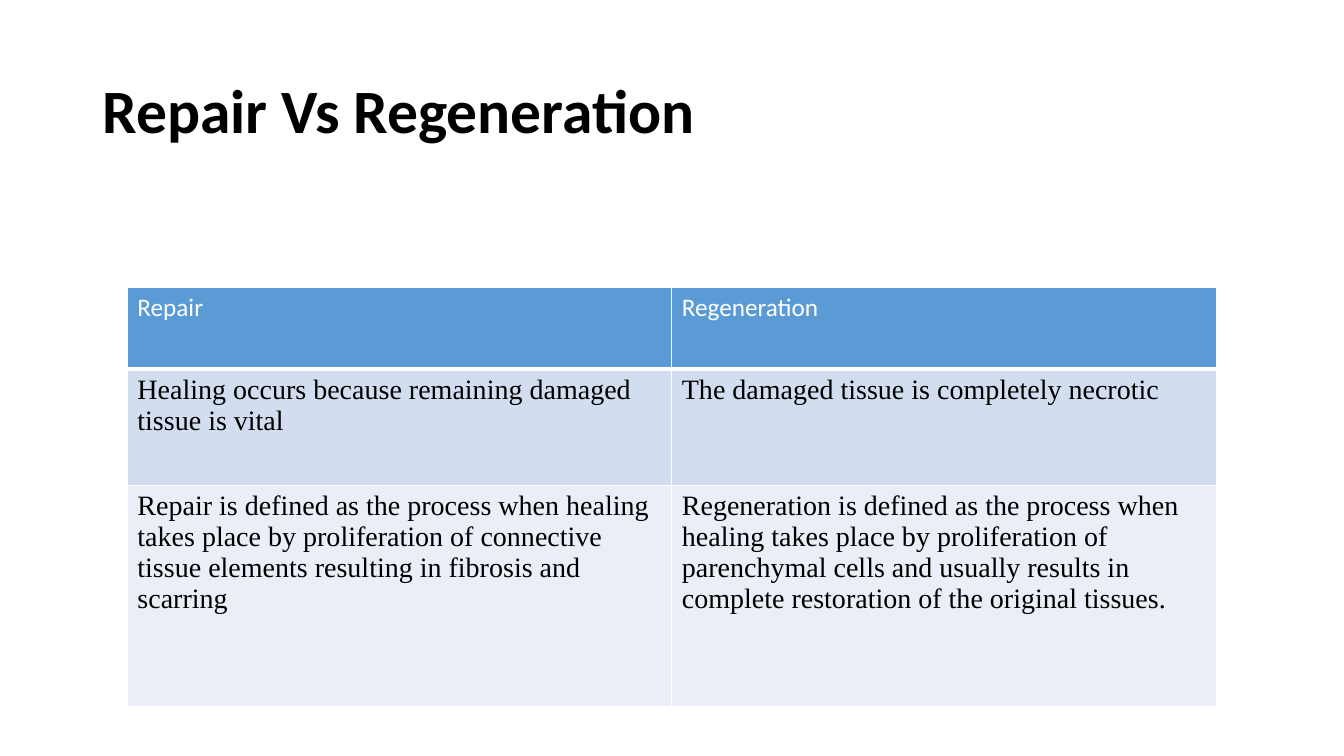
from lxml import etree
from pptx import Presentation
from pptx.dml.color import RGBColor
from pptx.enum.text import MSO_ANCHOR
from pptx.oxml.ns import qn
from pptx.util import Cm, Pt

WHITE, BLACK = "FFFFFF", "000000"
HEADER_FILL = "5B9BD5"
BODY_FILLS = ("D2DEEF", "EAEFF7")
ROW_HEIGHTS = (2.05, 2.93, 5.57)
COLUMN_WIDTH = 13.72

COMPARISON = (
    ("Repair", "Regeneration"),
    ("Healing occurs because remaining damaged tissue is vital",
     "The damaged tissue is completely necrotic"),
    ("Repair is defined as the process when healing takes place by "
     "proliferation of connective tissue elements resulting in fibrosis "
     "and scarring",
     "Regeneration is defined as the process when healing takes place by "
     "proliferation of parenchymal cells and usually results in complete "
     "restoration of the original tissues."),
)


def color(hex_code):
    return RGBColor.from_string(hex_code)


def format_runs(paragraph, font_name, size, hex_code, bold=False):
    for run in paragraph.runs:
        run.font.name = font_name
        run.font.size = Pt(size)
        run.font.bold = bold
        run.font.color.rgb = color(hex_code)


def add_title(slide, wording):
    title = slide.shapes.add_textbox(Cm(2.33), Cm(1.01), Cm(29.21), Cm(3.68))
    frame = title.text_frame
    frame.word_wrap = True
    frame.vertical_anchor = MSO_ANCHOR.MIDDLE
    frame.text = wording
    heading = frame.paragraphs[0]
    heading.line_spacing = 0.9
    format_runs(heading, "Calibri", 44, BLACK, bold=True)


def set_borders(cell, bottom_width):
    """Draw white cell borders; they must precede the fill in tcPr."""
    properties = cell._tc.get_or_add_tcPr()
    widths = {"a:lnL": 1, "a:lnR": 1, "a:lnT": 1, "a:lnB": bottom_width}
    for position, (tag, width) in enumerate(widths.items()):
        border = etree.Element(qn(tag), w=str(Pt(width)))
        fill = etree.SubElement(border, qn("a:solidFill"))
        etree.SubElement(fill, qn("a:srgbClr"), val=WHITE)
        properties.insert(position, border)


def add_comparison_table(slide):
    column_count = len(COMPARISON[0])
    table = slide.shapes.add_table(
        len(COMPARISON), column_count, Cm(3.21), Cm(7.25),
        Cm(COLUMN_WIDTH * column_count), Cm(sum(ROW_HEIGHTS))).table
    for column in table.columns:
        column.width = Cm(COLUMN_WIDTH)
    for row_index, (row, height) in enumerate(zip(table.rows, ROW_HEIGHTS)):
        row.height = Cm(height)
        is_header = row_index == 0
        for cell, wording in zip(row.cells, COMPARISON[row_index]):
            cell.text = wording
            cell.fill.solid()
            cell.fill.fore_color.rgb = color(
                HEADER_FILL if is_header else BODY_FILLS[row_index - 1])
            set_borders(cell, bottom_width=3 if is_header else 1)
            style = (("Calibri", 18, WHITE) if is_header
                     else ("Times New Roman", 20, BLACK))
            format_runs(cell.text_frame.paragraphs[0], *style)


def main():
    presentation = Presentation()
    presentation.slide_width = Cm(33.87)
    presentation.slide_height = Cm(19.05)
    slide = presentation.slides.add_slide(presentation.slide_layouts[6])
    add_title(slide, "Repair Vs Regeneration")
    add_comparison_table(slide)
    presentation.save("out.pptx")


if __name__ == "__main__":
    main()
